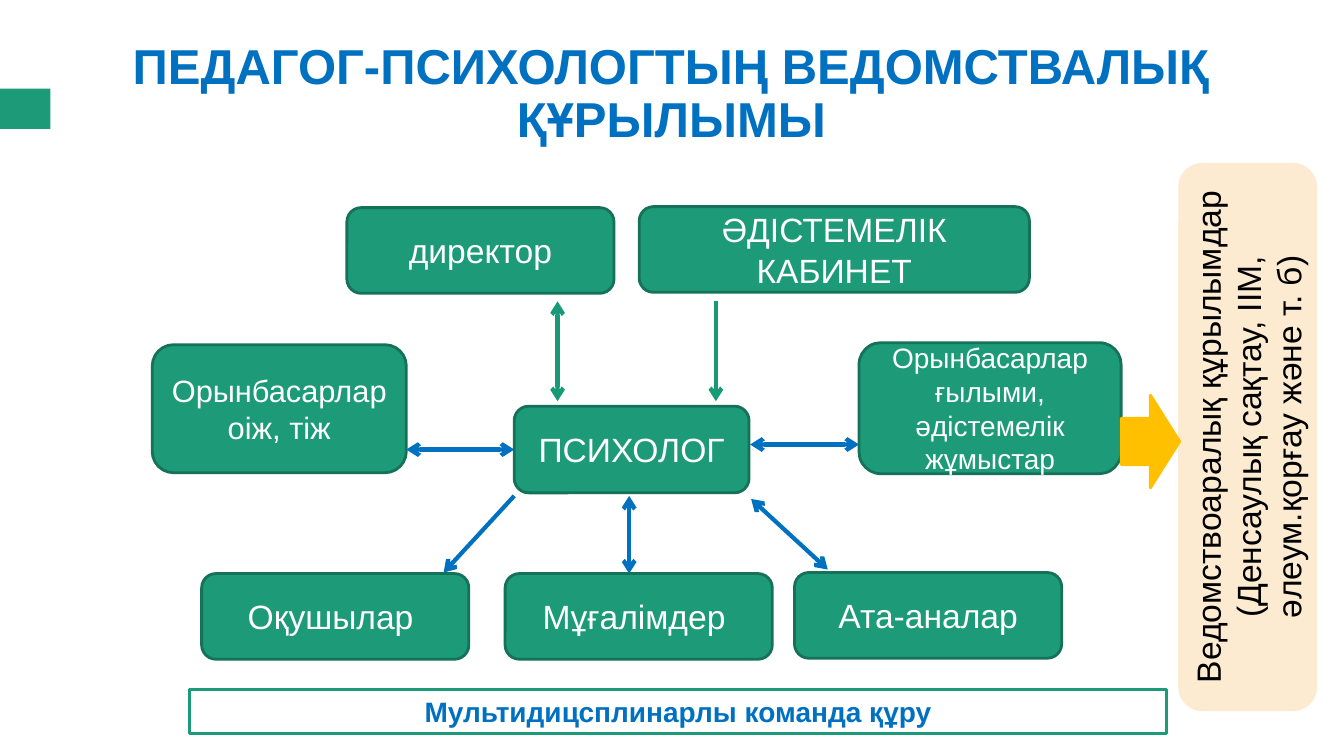
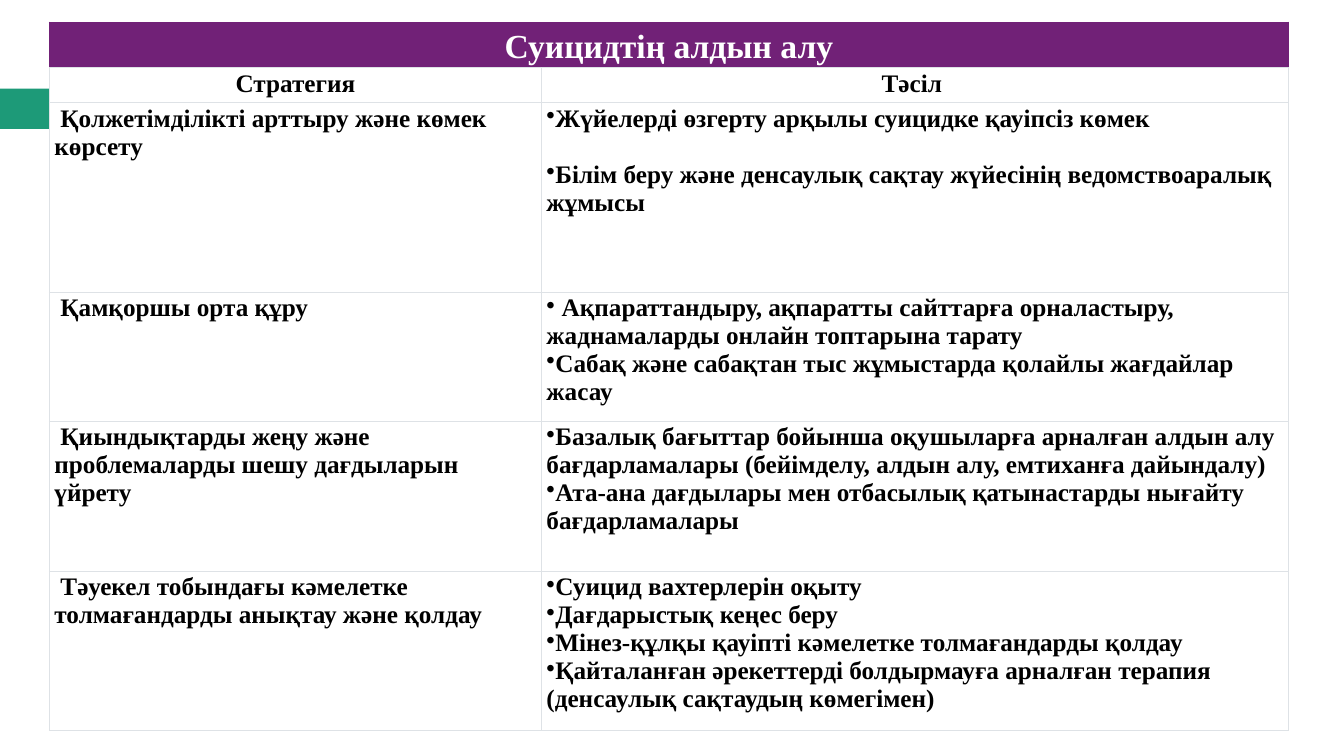
import lxml.etree
import pptx
import pptx.dml.color
import pptx.enum.shapes
import pptx.enum.text
import pptx.oxml.ns
import pptx.util

Inches = pptx.util.Inches
Pt = pptx.util.Pt
Form = pptx.enum.shapes.MSO_SHAPE
Align = pptx.enum.text.PP_ALIGN
Anchor = pptx.enum.text.MSO_ANCHOR

HEX = {
    "green": "1D9A78", "edge": "157259", "leaf": "199A77", "blue": "0070C0",
    "gold": "FFC000", "cream": "FCEBD1", "plum": "712177", "grid": "DEE2E6",
    "white": "FFFFFF", "black": "000000",
}
SANS, SERIF = "Arial", "Times New Roman"


def rgb(name):
    return pptx.dml.color.RGBColor.from_string(HEX[name])


def node(parent, tag, **attrs):
    return lxml.etree.SubElement(parent, pptx.oxml.ns.qn(tag), attrs)


class Deck:
    """Holds the style and the current slide."""

    def __init__(self):
        self.show = pptx.Presentation()
        self.show.slide_width = Inches(13.33)
        self.show.slide_height = Inches(7.5)
        self.slide = None

    def start(self, layout):
        """New slide with the green mark at its left edge."""
        self.slide = self.show.slides.add_slide(self.show.slide_layouts[layout])
        self.shape(Form.RECTANGLE, (0, 0.88, 0.5, 0.4), "green")

    def text(self, para, words, size, color, font=SANS, bold=False, align=Align.CENTER):
        para.alignment = align
        run = para.add_run()
        run.text = words
        run.font.name = font
        run.font.size = Pt(size)
        run.font.bold = bold
        run.font.color.rgb = rgb(color)

    def title(self, words):
        head = self.slide.shapes.title
        head.left, head.top, head.width, head.height = map(Inches, (0.91, 0.22, 11.5, 1.45))
        frame = head.text_frame
        frame.auto_size = pptx.enum.text.MSO_AUTO_SIZE.NONE
        frame.vertical_anchor = Anchor.MIDDLE
        para = frame.paragraphs[0]
        para.line_spacing = 0.9
        self.text(para, words, 35, "blue", bold=True)

    def shape(self, form, place, fill, edge=None):
        item = self.slide.shapes.add_shape(form, *map(Inches, place))
        item.shadow.inherit = False
        item.fill.solid()
        item.fill.fore_color.rgb = rgb(fill)
        if edge:
            item.line.color.rgb = rgb(edge)
            item.line.width = Pt(2)
        else:
            item.line.fill.background()
        return item

    def box(self, words, place, size=24, form=Form.ROUNDED_RECTANGLE,
            fill="green", edge="edge", color="white", bold=False):
        item = self.shape(form, place, fill, edge)
        item.text_frame.word_wrap = True
        self.text(item.text_frame.paragraphs[0], words, size, color, bold=bold)
        return item

    def arrow(self, start, end, color="blue", both=True):
        """Line with a head at its end, or at both ends."""
        kind = pptx.enum.shapes.MSO_CONNECTOR.STRAIGHT
        line = self.slide.shapes.add_connector(kind, *map(Inches, start + end))
        line.line.color.rgb = rgb(color)
        line.line.width = Pt(3)
        props = line.element.spPr
        stroke = props.find(pptx.oxml.ns.qn("a:ln"))
        if both:
            node(stroke, "a:headEnd", type="arrow")
        node(stroke, "a:tailEnd", type="arrow")
        node(props, "a:effectLst")
        return line

    def table(self, place, widths, heights):
        frame = self.slide.shapes.add_table(len(heights), len(widths), *map(Inches, place))
        grid = frame.table
        grid.first_row = grid.horz_banding = False
        for col, width in zip(grid.columns, widths):
            col.width = Inches(width)
        for row, height in zip(grid.rows, heights):
            row.height = Inches(height)
        return grid

    def cell(self, cell, fill="white", edge="grid"):
        """Set margins, borders and fill of a cell."""
        cell.margin_left = cell.margin_right = Inches(0.05)
        cell.margin_top = cell.margin_bottom = Inches(0.02)
        props = cell._tc.get_or_add_tcPr()
        for side in "LRTB":
            line = node(props, "a:ln" + side, w=str(Pt(0.75)))
            paint = node(line, "a:solidFill")
            node(paint, "a:srgbClr", val=HEX["grid" if side == "B" else edge])
        cell.fill.solid()
        cell.fill.fore_color.rgb = rgb(fill)

    def lines(self, cell, items, bullet=False, gap=0, indent=0, align=Align.LEFT):
        """Bold serif paragraphs, with a gap between them."""
        for i, words in enumerate(items):
            para = cell.text_frame.add_paragraph() if i else cell.text_frame.paragraphs[0]
            if i and gap:
                para.space_before = Pt(gap)
            self.text(para, words, 18, "black", SERIF, True, align)
            props = para._p.get_or_add_pPr()
            props.set("marL", "0")
            props.set("indent", str(Inches(indent)))
            if bullet:
                tint = node(props, "a:buClr")
                node(tint, "a:srgbClr", val=HEX["black"])
                node(props, "a:buChar", char="•")


def chart(deck):
    """Slide 1: the psychologist and the people around."""
    deck.start(5)
    deck.title("ПЕДАГОГ-ПСИХОЛОГТЫҢ ВЕДОМСТВАЛЫҚ ҚҰРЫЛЫМЫ")

    # Boxes
    hub = deck.box("ПСИХОЛОГ", (5.1, 4.03, 2.33, 0.86))
    side = deck.box("Ведомствоаралық құрылымдар (Денсаулық сақтау, ІІМ, әлеум.қорғау және т. б)",
                    (9.67, 3.66, 5.41, 1.35), fill="cream", edge="cream", color="black")
    side.rotation = 270
    for words, left, top, width in (
        ("директор", 3.44, 2.06, 2.65),
        ("ӘДІСТЕМЕЛІК КАБИНЕТ", 6.34, 2.05, 3.87),
        ("Оқушылар ", 2, 5.69, 2.65),
        ("Мұғалімдер ", 5.01, 5.69, 2.65),
        ("Ата-аналар", 7.88, 5.68, 2.65),
    ):
        deck.box(words, (left, top, width, 0.85))
    deck.box("Орынбасарлар ғылыми, әдістемелік жұмыстар", (8.52, 3.4, 2.6, 1.3), 20)
    deck.box("Орынбасарлар оіж, тіж", (1.51, 3.42, 2.52, 1.27), 22)

    # Arrows
    deck.arrow((5.53, 2.99), (5.53, 3.98), "leaf")
    deck.arrow((7.1, 2.99), (7.1, 3.98), "leaf", both=False)
    deck.arrow((4.03, 4.46), (5.1, 4.46)).end_connect(hub, 1)
    deck.arrow((7.44, 4.41), (8.52, 4.41))
    deck.arrow((5.1, 4.92), (4.4, 5.68), both=False)
    deck.arrow((7.45, 4.95), (8.21, 5.65))
    deck.arrow((6.24, 4.92), (6.24, 5.69))
    deck.shape(Form.RIGHT_ARROW, (11.12, 3.92, 0.58, 0.92), "gold", "gold")

    # Bottom bar
    deck.box("Мультидицсплинарлы команда құру", (1.88, 6.84, 9.69, 0.44), 20,
             Form.RECTANGLE, "white", "green", "blue", True)


PLAN = (
    ("Қолжетімділікті арттыру және көмек көрсету", 20, (
        "Жүйелерді өзгерту арқылы суицидке қауіпсіз көмек",
        "Білім беру және денсаулық сақтау жүйесінің ведомствоаралық жұмысы")),
    ("Қамқоршы орта құру", 0, (
        " Ақпараттандыру, ақпаратты сайттарға орналастыру, жаднамаларды онлайн топтарына тарату",
        "Сабақ және сабақтан тыс жұмыстарда қолайлы жағдайлар жасау")),
    ("Қиындықтарды жеңу және проблемаларды шешу дағдыларын үйрету", 0, (
        "Базалық бағыттар бойынша оқушыларға арналған алдын алу бағдарламалары "
        "(бейімделу, алдын алу, емтиханға дайындалу)",
        "Ата-ана дағдылары мен отбасылық қатынастарды нығайту бағдарламалары")),
    ("Тәуекел тобындағы кәмелетке толмағандарды анықтау және қолдау", 0, (
        "Суицид вахтерлерін оқыту",
        "Дағдарыстық кеңес беру",
        "Мінез-құлқы қауіпті кәмелетке толмағандарды қолдау",
        "Қайталанған әрекеттерді болдырмауға арналған терапия (денсаулық сақтаудың көмегімен)")),
)


def plan(deck):
    """Slide 2: table of strategies and methods."""
    deck.start(6)
    grid = deck.table((0.49, 0.22, 12.29, 7.03), (4.88, 7.41),
                      (0.45, 0.35, 1.88, 1.28, 1.49, 1.58))
    for r, row in enumerate(grid.rows):
        for cell in row.cells:
            if r:
                deck.cell(cell)
            else:
                deck.cell(cell, "plum", "plum")

    # Heading rows
    top = grid.cell(0, 0)
    top.merge(grid.cell(0, 1))
    top.vertical_anchor = Anchor.BOTTOM
    deck.text(top.text_frame.paragraphs[0], "Суицидтің алдын алу", 24, "white", SERIF, True)
    for c, words in enumerate(("Стратегия", "Тәсіл ")):
        deck.lines(grid.cell(1, c), [words], align=Align.CENTER)

    # Strategies
    for r, (goal, gap, steps) in enumerate(PLAN, 2):
        deck.lines(grid.cell(r, 0), [goal], indent=0.06)
        deck.lines(grid.cell(r, 1), steps, bullet=True, gap=gap, indent=-0.12)


def main():
    deck = Deck()
    chart(deck)
    plan(deck)
    deck.show.save("out.pptx")


if __name__ == "__main__":
    main()
